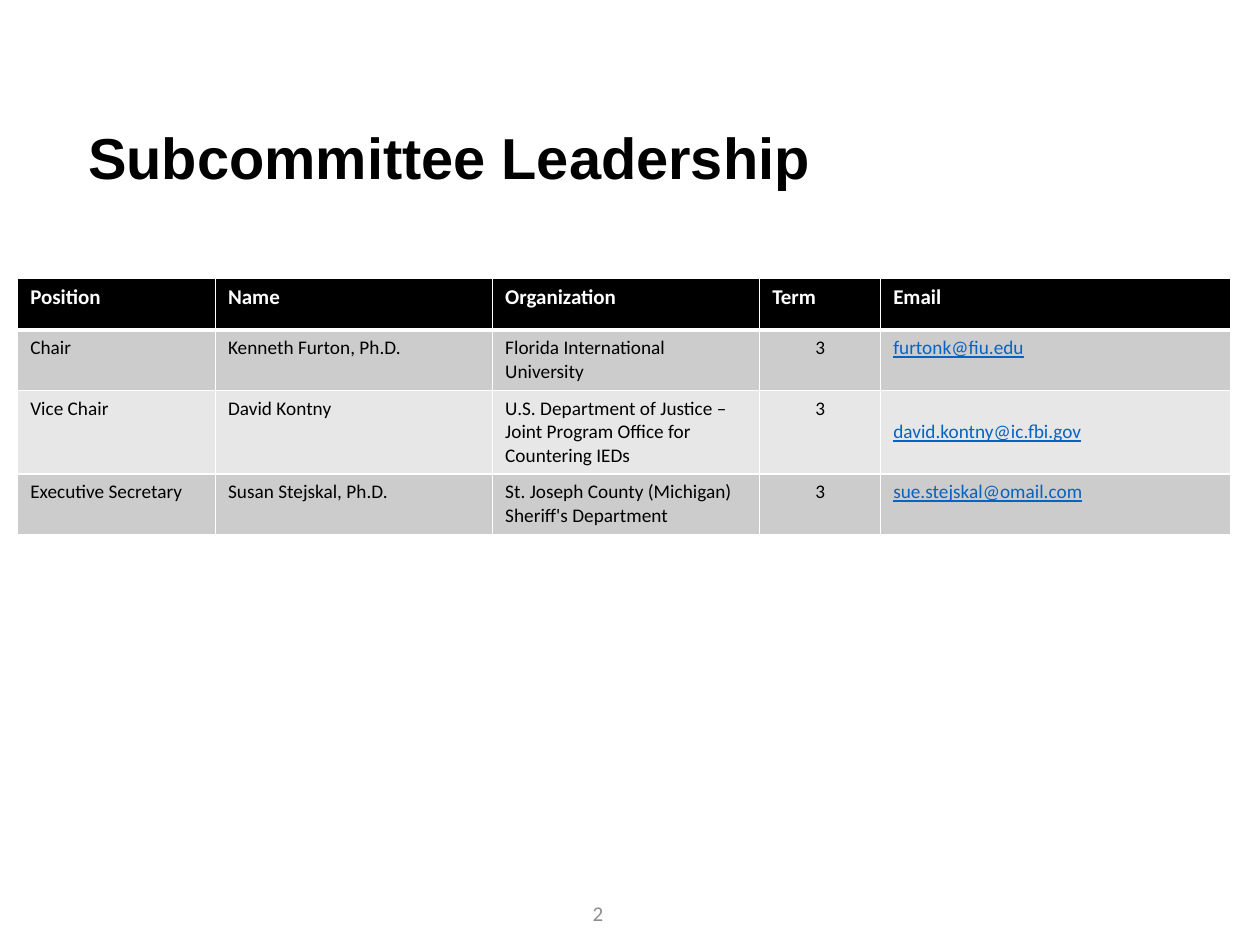
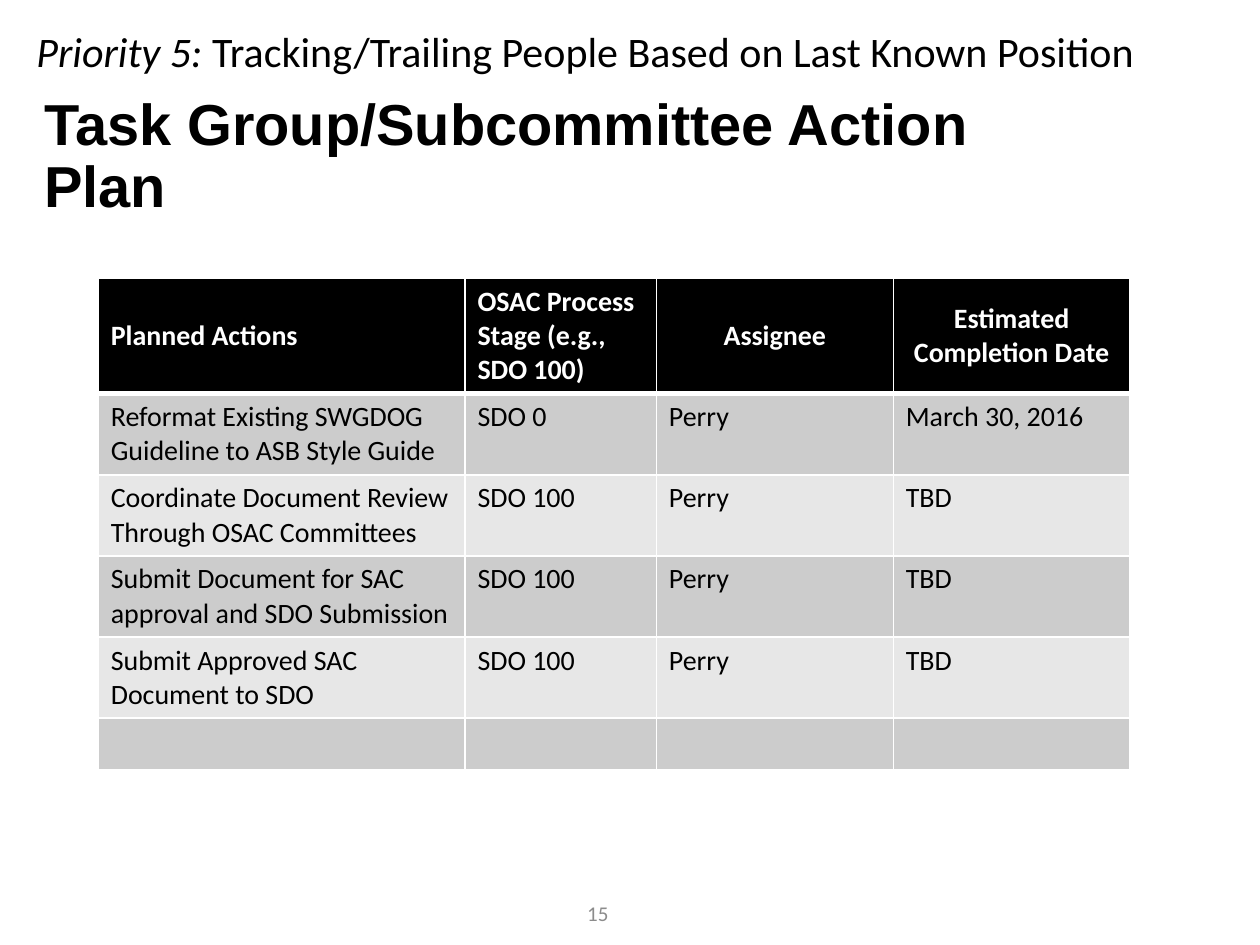
from pptx import Presentation
from pptx import util as u
from pptx.dml.color import RGBColor
from pptx.enum import text as t
from pptx.oxml import parse_xml
from pptx.oxml.ns import nsdecls

COLORS = {"black": "000000", "white": "FFFFFF", "dark band": "CCCCCC",
          "light band": "E7E7E7", "link": "0563C1", "number": "8C8C8C"}
CENTER, MIDDLE = t.PP_ALIGN.CENTER, t.MSO_ANCHOR.MIDDLE


def write(para, text, size=12, color="black", font="Calibri",
          bold=False, italic=False, underline=False, align=None):
    """Add one formatted span to a paragraph."""
    span = para.add_run()
    span.text = text
    span.font.name = font
    span.font.size = u.Pt(size)
    span.font.bold = bold
    span.font.italic = italic
    span.font.underline = underline
    span.font.color.rgb = RGBColor.from_string(COLORS[color])
    if align is not None:
        para.alignment = align


def draw_border(cell, side, points):
    """Add a white border to one side (L, R, T or B) of a cell."""
    cell._tc.get_or_add_tcPr().append(parse_xml(
        f'<a:ln{side} {nsdecls("a")} w="{u.Pt(points)}"><a:solidFill>'
        f'<a:srgbClr val="{COLORS["white"]}"/></a:solidFill></a:ln{side}>'))


slides = [
    {
        "title": "Subcommittee Leadership", "title at": (0.6, 0.55), "number": "2",
        "table at": (0.14, 2.21), "columns": [1.57, 2.2, 2.12, 0.96, 2.78],
        "heights": [0.41] * 4, "header size": 12, "body size": 11,
        "header anchor": t.MSO_ANCHOR.TOP,
        "centered headers": [], "centered columns": [3], "link column": 4,
        "rows": [
            ["Position", "Name", "Organization", "Term", "Email"],
            ["Chair", "Kenneth Furton, Ph.D.", "Florida International University",
             "3", "furtonk@fiu.edu"],
            ["Vice Chair", "David Kontny",
             "U.S. Department of Justice – Joint Program Office for Countering IEDs",
             "3", "david.kontny@ic.fbi.gov"],
            ["Executive Secretary", "Susan Stejskal, Ph.D.",
             "St. Joseph County (Michigan) Sheriff's Department",
             "3", "sue.stejskal@omail.com"],
        ],
        "lowered cell": (2, 4),
    },
    {
        "title": "Task Group/Subcommittee Action Plan", "title at": (0.25, 0.53),
        "number": "15",
        "priority": ("Priority 5: ",
                     "Tracking/Trailing People Based on Last Known Position"),
        "table at": (0.78, 2.21), "columns": [2.91, 1.52, 1.88, 1.88],
        "heights": [0.67] + [0.4] * 5, "header size": 16, "body size": 16,
        "header anchor": MIDDLE,
        "centered headers": [2, 3], "centered columns": [], "link column": None,
        "rows": [
            ["Planned Actions", "OSAC Process Stage (e.g., SDO 100)", "Assignee",
             "Estimated Completion Date"],
            ["Reformat Existing SWGDOG Guideline to ASB Style Guide",
             "SDO 0", "Perry", "March 30, 2016"],
            ["Coordinate Document Review Through OSAC Committees",
             "SDO 100", "Perry", "TBD"],
            ["Submit Document for SAC approval and SDO Submission",
             "SDO 100", "Perry", "TBD"],
            ["Submit Approved SAC Document to SDO", "SDO 100", "Perry", "TBD"],
            [""] * 4,
        ],
        "lowered cell": None,
    },
]

deck = Presentation()
deck.slide_width, deck.slide_height = u.Inches(10), u.Inches(7.5)

for content in slides:
    slide = deck.slides.add_slide(deck.slide_layouts[5])

    # Title
    title = slide.shapes.title
    title.left, title.top = map(u.Inches, content["title at"])
    title.width, title.height = u.Inches(8.62), u.Inches(1.45)
    title.text_frame.auto_size = t.MSO_AUTO_SIZE.NONE
    title.text_frame.vertical_anchor = MIDDLE
    para = title.text_frame.paragraphs[0]
    para.line_spacing = 0.9
    write(para, content["title"], size=33, font="Arial", bold=True,
          align=t.PP_ALIGN.LEFT)

    # Table
    rows, columns = content["rows"], content["columns"]
    left, top = content["table at"]
    table = slide.shapes.add_table(
        len(rows), len(columns), u.Inches(left), u.Inches(top),
        u.Inches(sum(columns)), u.Inches(sum(content["heights"]))).table
    for column, width in zip(table.columns, columns):
        column.width = u.Inches(width)
    for row, height in zip(table.rows, content["heights"]):
        row.height = u.Inches(height)

    for r, row in enumerate(rows):
        header = r == 0
        band = "black" if header else "dark band" if r % 2 else "light band"
        centered = content["centered headers" if header else "centered columns"]
        for c, text in enumerate(row):
            cell = table.cell(r, c)
            for side in "LRTB":
                thick = (side == "B" and header) or (side == "T" and r == 1)
                draw_border(cell, side, 3 if thick else 1)
            cell.fill.solid()
            cell.fill.fore_color.rgb = RGBColor.from_string(COLORS[band])
            if header:
                cell.vertical_anchor = content["header anchor"]
            if (r, c) == content["lowered cell"]:
                cell.margin_top = u.Inches(0.24)
            if text:
                link = not header and c == content["link column"]
                write(cell.text_frame.paragraphs[0], text,
                      size=content["header size" if header else "body size"],
                      color="white" if header else "link" if link else "black",
                      bold=header, underline=link,
                      align=CENTER if c in centered else None)

    # Priority line above the title
    if "priority" in content:
        box = slide.shapes.add_textbox(
            u.Inches(0.19), u.Inches(0.15), u.Inches(8.95), u.Inches(0.98))
        box.text_frame.word_wrap = True
        label, subject = content["priority"]
        para = box.text_frame.paragraphs[0]
        write(para, label, size=24, italic=True)
        write(para, subject, size=24)

    # Slide number
    box = slide.shapes.add_textbox(
        u.Inches(3.62), u.Inches(7.05), u.Inches(2.25), u.Inches(0.4))
    box.text_frame.word_wrap = True
    box.text_frame.vertical_anchor = MIDDLE
    write(box.text_frame.paragraphs[0], content["number"], color="number",
          align=CENTER)

deck.save("out.pptx")
